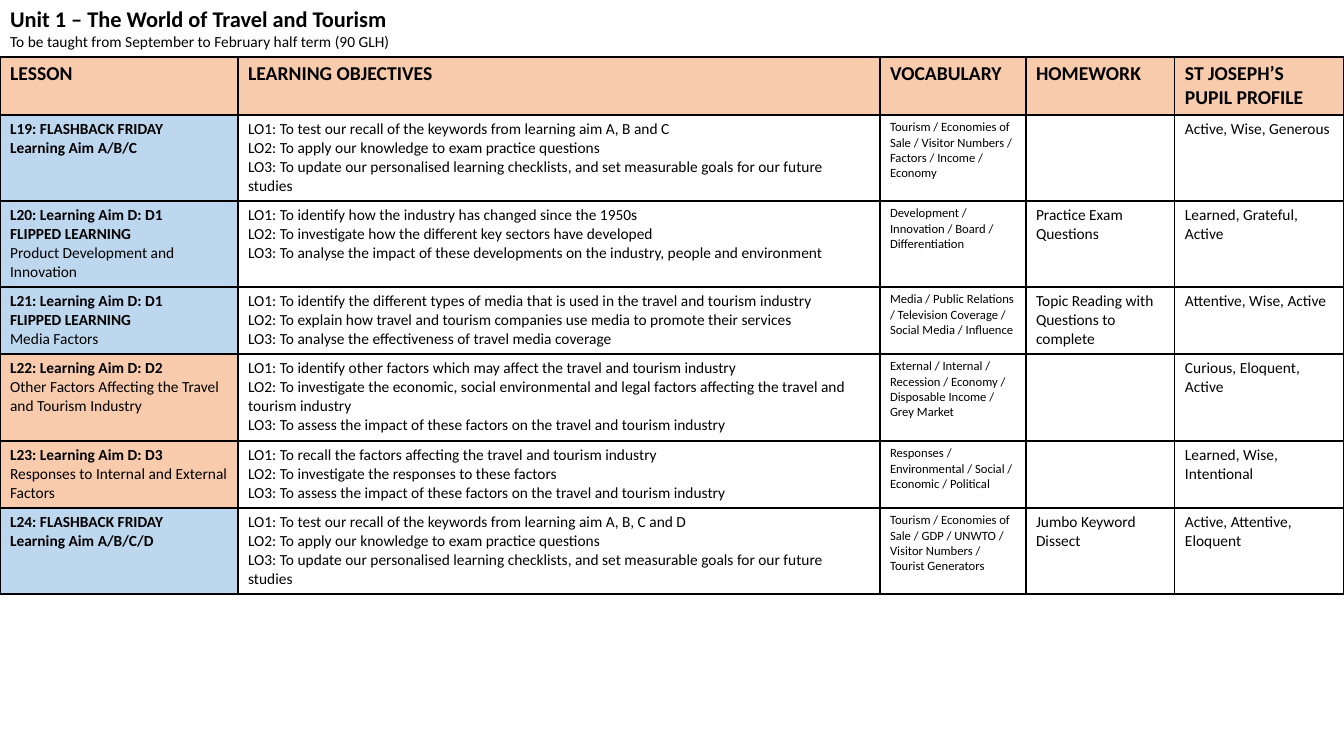
from lxml.etree import SubElement
from pptx import Presentation
from pptx.dml.color import RGBColor
from pptx.enum.text import MSO_ANCHOR, MSO_AUTO_SIZE, PP_ALIGN
from pptx.oxml.ns import qn
from pptx.util import Emu, Pt

SLIDE_WIDTH, SLIDE_HEIGHT = 1344, 756
EMU_PER_PX = 12192000 / SLIDE_WIDTH
BLACK = RGBColor(0x00, 0x00, 0x00)
PEACH = RGBColor(0xF8, 0xCB, 0xAD)
BLUE = RGBColor(0xBD, 0xD7, 0xEE)

TITLE_HEIGHT = 57
COLUMN_WIDTHS = [238, 642, 146, 149, 169]
ROW_HEIGHTS = [58, 86, 86, 67, 87, 67, 86]
BODY_SIZES = [11, 11, 9, 11, 11]

HEADINGS = ["LESSON", "LEARNING OBJECTIVES", "VOCABULARY", "HOMEWORK", "ST JOSEPH’S PUPIL PROFILE"]

# Lesson colour, number of bold lesson lines, then the text of the five columns
LESSONS = [
    (BLUE, 2, [
        "L19: FLASHBACK FRIDAY\nLearning Aim A/B/C",
        "LO1: To test our recall of the keywords from learning aim A, B and C\n"
        "LO2: To apply our knowledge to exam practice questions\n"
        "LO3: To update our personalised learning checklists, and set measurable goals for our future studies",
        "Tourism / Economies of Sale / Visitor Numbers / Factors / Income / Economy",
        "",
        "Active, Wise, Generous"]),
    (BLUE, 2, [
        "L20: Learning Aim D: D1\nFLIPPED LEARNING\nProduct Development and Innovation",
        "LO1: To identify how the industry has changed since the 1950s\n"
        "LO2: To investigate how the different key sectors have developed\n"
        "LO3: To analyse the impact of these developments on the industry, people and environment",
        "Development / Innovation / Board / Differentiation",
        "Practice Exam Questions",
        "Learned, Grateful, Active"]),
    (BLUE, 2, [
        "L21: Learning Aim D: D1\nFLIPPED LEARNING\nMedia Factors",
        "LO1: To identify the different types of media that is used in the travel and tourism industry\n"
        "LO2: To explain how travel and tourism companies use media to promote their services\n"
        "LO3: To analyse the effectiveness of travel media coverage",
        "Media / Public Relations / Television Coverage / Social Media / Influence",
        "Topic Reading with Questions to complete",
        "Attentive, Wise, Active"]),
    (PEACH, 1, [
        "L22: Learning Aim D: D2\nOther Factors Affecting the Travel and Tourism Industry",
        "LO1: To identify other factors which may affect the travel and tourism industry\n"
        "LO2: To investigate the economic, social environmental and legal factors affecting the travel and "
        "tourism industry\n"
        "LO3: To assess the impact of these factors on the travel and tourism industry",
        "External / Internal / Recession / Economy / Disposable Income / Grey Market",
        "",
        "Curious, Eloquent, Active"]),
    (PEACH, 1, [
        "L23: Learning Aim D: D3\nResponses to Internal and External Factors",
        "LO1: To recall the factors affecting the travel and tourism industry\n"
        "LO2: To investigate the responses to these factors\n"
        "LO3: To assess the impact of these factors on the travel and tourism industry",
        "Responses / Environmental / Social / Economic / Political",
        "",
        "Learned, Wise, Intentional"]),
    (BLUE, 2, [
        "L24: FLASHBACK FRIDAY\nLearning Aim A/B/C/D",
        "LO1: To test our recall of the keywords from learning aim A, B, C and D\n"
        "LO2: To apply our knowledge to exam practice questions\n"
        "LO3: To update our personalised learning checklists, and set measurable goals for our future studies",
        "Tourism / Economies of Sale / GDP / UNWTO / Visitor Numbers / Tourist Generators",
        "Jumbo Keyword Dissect",
        "Active, Attentive, Eloquent"]),
]


def px(length):
    return Emu(round(length * EMU_PER_PX))


def format_text(text_frame, sizes, bold_lines):
    """Style each paragraph; the first bold_lines paragraphs are bold."""
    for index, (paragraph, size) in enumerate(zip(text_frame.paragraphs, sizes)):
        paragraph.alignment = PP_ALIGN.LEFT
        for run in paragraph.runs:
            run.font.name = "Calibri"
            run.font.size = Pt(size)
            run.font.bold = index < bold_lines
            run.font.color.rgb = BLACK


presentation = Presentation()
presentation.slide_width = px(SLIDE_WIDTH)
presentation.slide_height = px(SLIDE_HEIGHT)
slide = presentation.slides.add_slide(presentation.slide_layouts[5])

# Title with the teaching period below it
title = slide.shapes.title
title.left, title.top, title.width, title.height = px(0), px(0), px(SLIDE_WIDTH), px(TITLE_HEIGHT)
title_frame = title.text_frame
title_frame.text = (
    "Unit 1 – The World of Travel and Tourism\n"
    "To be taught from September to February half term (90 GLH)")
title_frame.word_wrap = True
title_frame.auto_size = MSO_AUTO_SIZE.SHAPE_TO_FIT_TEXT
title_frame.vertical_anchor = MSO_ANCHOR.TOP
format_text(title_frame, [16, 11], 1)

# Lesson table
table = slide.shapes.add_table(
    len(ROW_HEIGHTS), len(COLUMN_WIDTHS),
    px(0), px(TITLE_HEIGHT), px(SLIDE_WIDTH), px(sum(ROW_HEIGHTS))).table
table.first_row = False
table.horz_banding = False
for column, width in zip(table.columns, COLUMN_WIDTHS):
    column.width = px(width)
for row, height in zip(table.rows, ROW_HEIGHTS):
    row.height = px(height)

# Black one-point borders
for cell in table.iter_cells():
    properties = cell._tc.get_or_add_tcPr()
    for side in ("a:lnL", "a:lnR", "a:lnT", "a:lnB"):
        line = SubElement(properties, qn(side), w=str(Pt(1)))
        line_fill = SubElement(line, qn("a:solidFill"))
        SubElement(line_fill, qn("a:srgbClr"), val=str(BLACK))

# Heading row
for column_index, heading in enumerate(HEADINGS):
    cell = table.cell(0, column_index)
    cell.text_frame.text = heading
    cell.fill.solid()
    cell.fill.fore_color.rgb = PEACH
    format_text(cell.text_frame, [14], 1)

# Lesson rows
for row_index, (colour, bold_lines, texts) in enumerate(LESSONS, start=1):
    for column_index, (text, size) in enumerate(zip(texts, BODY_SIZES)):
        cell = table.cell(row_index, column_index)
        cell.text_frame.text = text
        if column_index == 0:
            cell.fill.solid()
            cell.fill.fore_color.rgb = colour
        else:
            cell.fill.background()
        line_count = len(cell.text_frame.paragraphs)
        format_text(cell.text_frame, [size] * line_count, bold_lines if column_index == 0 else 0)

presentation.save("out.pptx")
